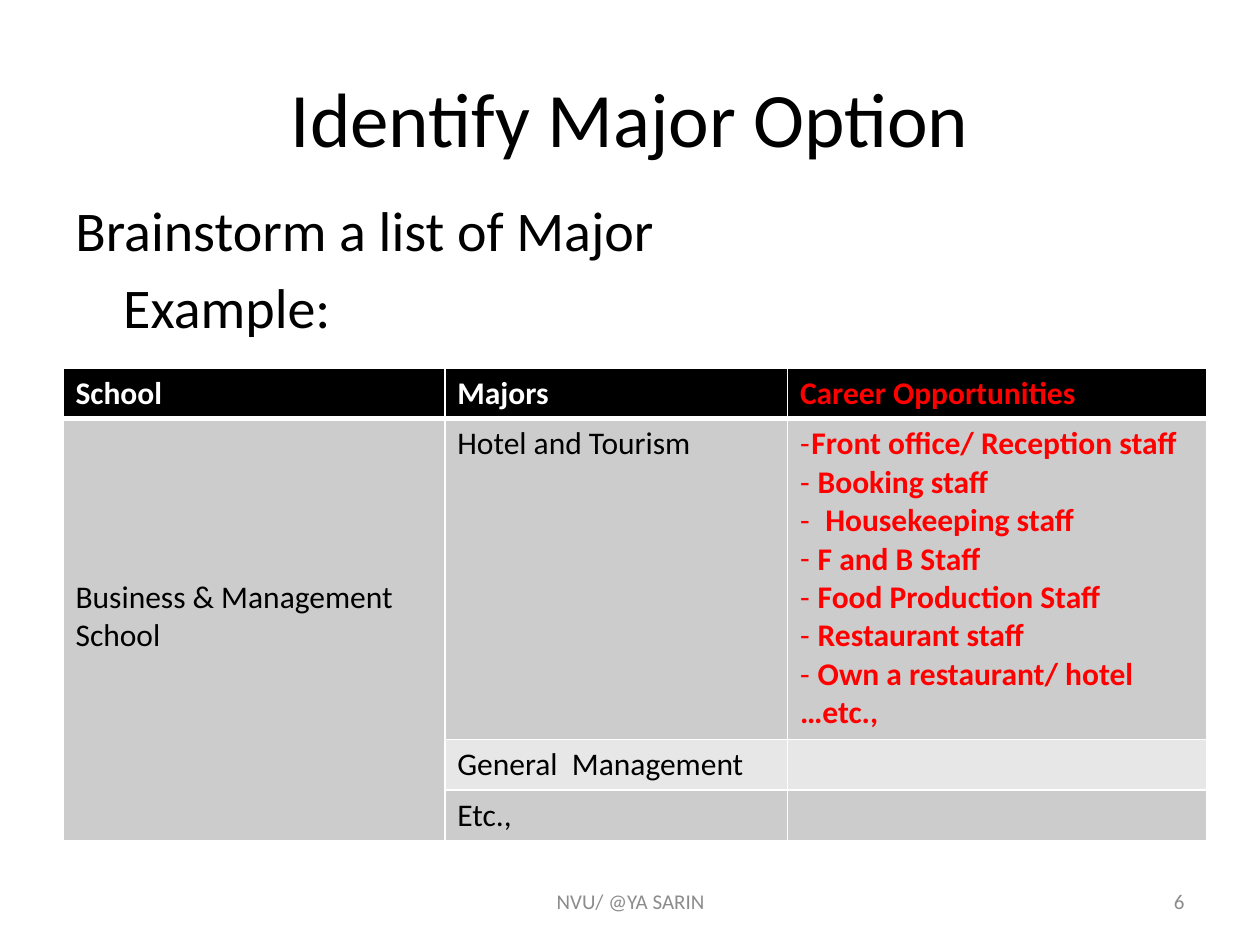
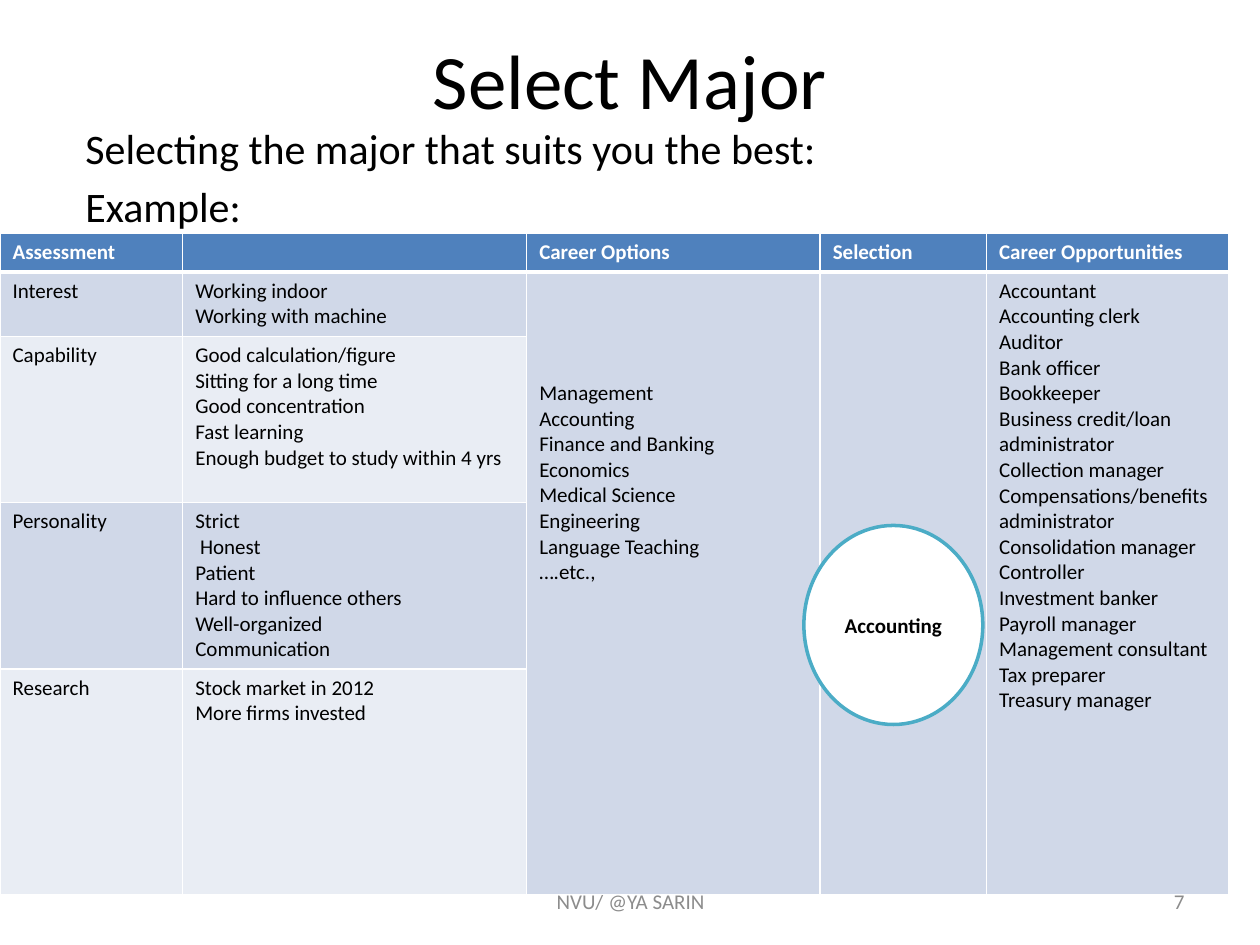
from lxml import etree
from pptx import Presentation
from pptx.dml.color import RGBColor
from pptx.enum import shapes, text
from pptx.oxml.ns import qn
from pptx.util import Inches, Pt

FONT = "Calibri"
FOOTER = "NVU/ @YA SARIN"
BLACK = RGBColor(0x00, 0x00, 0x00)
WHITE = RGBColor(0xFF, 0xFF, 0xFF)
RED = RGBColor(0xFF, 0x00, 0x00)
FOOTER_GREY = RGBColor(0x8C, 0x8C, 0x8C)
GREY_BANDS = (RGBColor(0xCC, 0xCC, 0xCC), RGBColor(0xE7, 0xE7, 0xE7))
BLUE_HEADER = RGBColor(0x4F, 0x81, 0xBD)
BLUE_BANDS = (RGBColor(0xD0, 0xD8, 0xE8), RGBColor(0xE9, 0xED, 0xF4))
TEAL = RGBColor(0x4B, 0xAC, 0xC6)

LEFT, CENTER, RIGHT = (text.PP_ALIGN.LEFT, text.PP_ALIGN.CENTER,
                       text.PP_ALIGN.RIGHT)
MIDDLE = text.MSO_ANCHOR.MIDDLE

CAREERS = [  # text and its distance from the dash
    ("Front office/ Reception staff", 0.09),
    ("Booking staff", 0.14),
    ("Housekeeping staff", 0.2),
    ("F and B Staff", 0.14),
    ("Food Production Staff", 0.14),
    ("Restaurant staff", 0.14),
    ("Own a restaurant/ hotel", 0.14),
]

MAJOR_ROWS = [
    ["School", "Majors", "Career Opportunities"],
    ["Business & Management School", "Hotel and Tourism",
     "\n".join([career for career, _ in CAREERS] + ["…etc.,"])],
    ["", "General  Management", ""],
    ["", "Etc.,", ""],
]

SELECTION_ROWS = [
    ["Assessment", "", "Career Options", "Selection", "Career Opportunities"],
    ["Interest", "Working indoor\nWorking with machine",
     "Management\nAccounting\nFinance and Banking\nEconomics\n"
     "Medical Science\nEngineering\nLanguage Teaching\n….etc.,",
     "",
     "Accountant\nAccounting clerk\nAuditor\nBank officer\nBookkeeper\n"
     "Business credit/loan administrator\nCollection manager\n"
     "Compensations/benefits administrator\nConsolidation manager\n"
     "Controller\nInvestment banker\nPayroll manager\n"
     "Management consultant\nTax preparer\nTreasury manager"],
    ["Capability",
     "Good calculation/figure\nSitting for a long time\nGood concentration\n"
     "Fast learning\nEnough budget to study within 4 yrs", "", "", ""],
    ["Personality",
     "Strict\n Honest\nPatient\nHard to influence others\n"
     "Well-organized\nCommunication", "", "", ""],
    ["Research", "Stock market in 2012\nMore firms invested", "", "", ""],
]


# Shared text helpers
def format_font(font, size, color=BLACK, bold=False):
    values = {"name": FONT, "size": Pt(size), "bold": bold}
    for name, value in values.items():
        setattr(font, name, value)
    font.color.rgb = color


def write_lines(tf, content, size, color=BLACK, bold=False, align=LEFT):
    for i, line in enumerate(content.split("\n")):
        p = tf.add_paragraph() if i else tf.paragraphs[0]
        p.alignment = align
        if line:
            r = p.add_run()
            r.text = line
            format_font(r.font, size, color, bold)
        else:
            etree.SubElement(p._p, qn("a:endParaRPr"), sz=str(size * 100))


def indent(p, left, first=0):
    pPr = p._p.get_or_add_pPr()
    pPr.set("marL", str(Inches(left)))
    pPr.set("indent", str(Inches(first)))
    return pPr


def add_text(s, box, content, size, **style):
    tf = s.shapes.add_textbox(*map(Inches, box)).text_frame
    tf.word_wrap = True
    write_lines(tf, content, size, **style)
    return tf


# Slide frame: title, lead-in lines and footer
def add_slide(prs, title, top, number):
    s = prs.slides.add_slide(prs.slide_layouts[5])
    sp = s.shapes.title
    for name, value in zip(("left", "top", "width", "height"),
                           (0.5, top, 9, 1.25)):
        setattr(sp, name, Inches(value))
    sp.text_frame.vertical_anchor = MIDDLE
    write_lines(sp.text_frame, title, 44, align=CENTER)
    for box, content, align in (
            ((7.17, 6.95, 2.33, 0.4), str(number), RIGHT),
            ((3.42, 6.95, 3.17, 0.4), FOOTER, CENTER)):
        tf = add_text(s, box, content, 12, color=FOOTER_GREY, align=align)
        tf.vertical_anchor = MIDDLE
    return s


def add_lead_in(s, box, content, size):
    tf = add_text(s, box, content, size)
    for p in tf.paragraphs:
        p.space_before = Pt(round(size * 0.18, 1))
    return tf


# Tables
def set_borders(cell, row):
    tcPr = cell._tc.get_or_add_tcPr()
    heavy = {0: "lnB", 1: "lnT"}.get(row)
    for side in ("lnL", "lnR", "lnT", "lnB"):
        width = Pt(3 if side == heavy else 1)
        ln = etree.SubElement(tcPr, qn("a:" + side), w=str(width))
        fill = etree.SubElement(ln, qn("a:solidFill"))
        etree.SubElement(fill, qn("a:srgbClr"), val=str(WHITE))


def add_grid(s, left, top, widths, heights, rows, size, header, bands,
             merged):
    box = map(Inches, (left, top, sum(widths), sum(heights)))
    table = s.shapes.add_table(len(rows), len(widths), *box).table
    table.horz_banding = False
    for col, width in zip(table.columns, widths):
        col.width = Inches(width)
    for row, height in zip(table.rows, heights):
        row.height = Inches(height)
    for i, row in enumerate(rows):
        for j, content in enumerate(row):
            cell = table.cell(i, j)
            set_borders(cell, i)
            band = bands[0] if j in merged else bands[(i - 1) % 2]
            cell.fill.solid()
            cell.fill.fore_color.rgb = band if i else header
            write_lines(cell.text_frame, content, size,
                        BLACK if i else WHITE, bold=i == 0)
    for j in merged:
        table.cell(1, j).merge(table.cell(len(rows) - 1, j))
    return table


def highlight_careers(table):
    for i in (0, 1):
        for p in table.cell(i, 2).text_frame.paragraphs:
            format_font(p.runs[0].font, 18, RED, True)
    for p, (_, gap) in zip(table.cell(1, 2).text_frame.paragraphs, CAREERS):
        pPr = indent(p, gap, -gap)
        etree.SubElement(pPr, qn("a:buFont"), typeface=FONT)
        etree.SubElement(pPr, qn("a:buChar"), char="-")


def add_choice(s, box, content):
    sp = s.shapes.add_shape(shapes.MSO_SHAPE.FLOWCHART_CONNECTOR,
                            *map(Inches, box))
    sp.shadow.inherit = False
    sp.fill.solid()
    sp.fill.fore_color.rgb = WHITE
    sp.line.color.rgb = TEAL
    sp.line.width = Pt(2)
    sp.text_frame.vertical_anchor = MIDDLE
    write_lines(sp.text_frame, content, 12, bold=True, align=CENTER)


# Slides
def build_identify_slide(prs):
    s = add_slide(prs, "Identify Major Option", 0.3, 6)
    tf = add_lead_in(s, (0.5, 1.5, 9, 1.4),
                     "Brainstorm a list of Major\nExample:", 32)
    indent(tf.paragraphs[1], 0.38)
    table = add_grid(s, 0.5, 2.92, (3.03, 2.72, 3.33), (0.4, 2.55, 0.4, 0.4),
                     MAJOR_ROWS, 18, BLACK, GREY_BANDS, merged=[0])
    table.cell(1, 0).margin_top = Inches(1.27)
    highlight_careers(table)


def build_select_slide(prs):
    s = add_slide(prs, "Select Major", 0, 7)
    add_lead_in(s, (0.58, 0.92, 9, 1.33),
                "Selecting the major that suits you the best:\nExample:", 24)
    table = add_grid(s, 0, 1.85, (1.45, 2.73, 2.33, 1.32, 1.92),
                     (0.31, 0.51, 1.32, 1.32, 1.79), SELECTION_ROWS, 12,
                     BLUE_HEADER, BLUE_BANDS, merged=[2, 3, 4])
    table.cell(1, 2).margin_top = Inches(0.86)
    add_choice(s, (6.38, 4.17, 1.42, 1.58), "Accounting")


def main():
    prs = Presentation()
    prs.slide_width, prs.slide_height = Inches(10), Inches(7.5)
    build_identify_slide(prs)
    build_select_slide(prs)
    prs.save("out.pptx")


if __name__ == "__main__":
    main()
